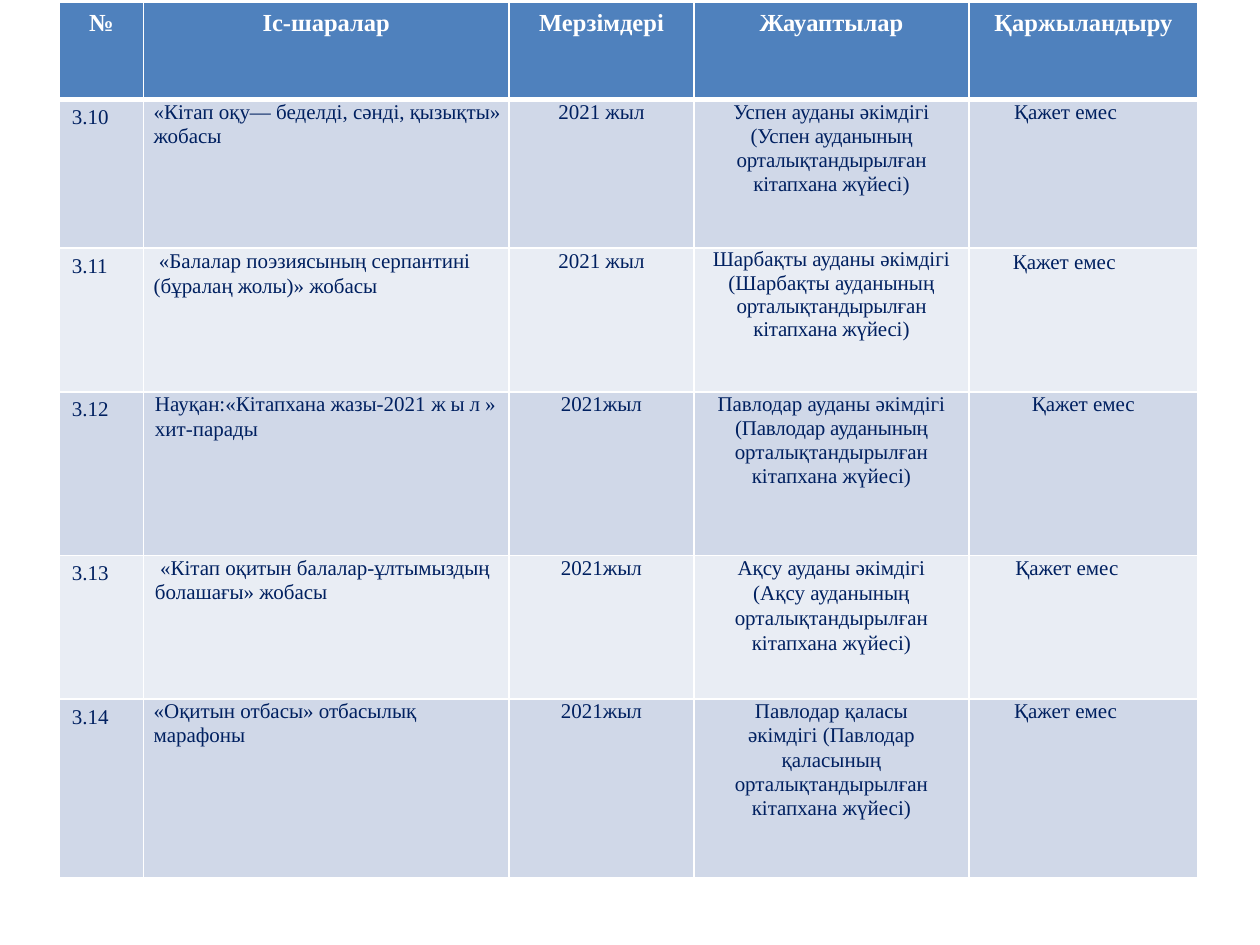
from dataclasses import dataclass

from lxml import etree
from pptx import Presentation
from pptx.dml.color import RGBColor
from pptx.enum.text import PP_ALIGN
from pptx.oxml.ns import qn
from pptx.util import Inches, Pt

LEFT, CENTER = PP_ALIGN.LEFT, PP_ALIGN.CENTER
WHITE = RGBColor(0xFF, 0xFF, 0xFF)
NAVY = RGBColor(0x00, 0x20, 0x60)
HEADER_BLUE = RGBColor(0x4F, 0x81, 0xBD)
BANDS = (RGBColor(0xD0, 0xD8, 0xE8), RGBColor(0xE9, 0xED, 0xF4))
FONT = "Times New Roman"

TABLE_BOX = (0.47, 0.02, 9.04, 6.95)
COLUMN_WIDTHS = (0.67, 2.9, 1.47, 2.18, 1.82)
ROW_HEIGHTS = (0.77, 1.18, 1.14, 1.3, 1.14, 1.42)
NUMBER_MARGINS = (0.1, 0.05)
FLUSH_MARGINS = (0, 0)


@dataclass
class Entry:
    """Cell text: runs are (text, letter spacing in points) pairs."""
    runs: tuple
    indent: float = 0
    leading: float = None
    align: PP_ALIGN = LEFT


def plain(text, indent=0, leading=None, align=LEFT):
    return Entry(((text, 0),), indent, leading, align)


HEADINGS = ("№", "Іс-шаралар", "Мерзімдері", "Жауаптылар", "Қаржыландыру")
FUNDING = "Қажет емес"
EVENTS = (
    (plain("3.10"),
     plain("«Кітап оқу— беделді, сәнді, қызықты» жобасы", 0.08, 13.8),
     plain("2021 жыл", 0.33, 13.8, CENTER),
     Entry((("Успен ауданы әкімдігі ", 0),
            ("(Успен ауданының орталықтандырылған кітапхана жүйесі", -0.1),
            (")", 0)), 0.27, 13.8, CENTER),
     plain(FUNDING, 0.36, 13.8)),
    (plain("3.11"),
     plain(" «Балалар поэзиясының серпантині (бұралаң жолы)» жобасы", 0.08, 14.4),
     plain("2021 жыл", 0.09, 14.1, CENTER),
     Entry((("Шарбақты ауданы әкімдігі (Шарбақты ауданының ", 0),
            ("орталықтандырылған кітапхана жүйесі", -0.1),
            (")", 0)), align=CENTER),
     plain(FUNDING, 0.35, 14.6)),
    (plain("3.12"),
     Entry((("Науқан:«Кітапхана жазы-2021 ", 0), ("жыл", 2.8),
            ("» хит-парады", 0)), 0.09, 14.1),
     plain("2021жыл", 0, 13.7, CENTER),
     Entry((("Павлодар ауданы әкімдігі ", 0), ("(Павлодар ауданының ", -0.1),
            ("орталықтандырылған кітапхана жүйесі)", 0)), 0.12, 13.7, CENTER),
     plain(FUNDING, 0.12, 13.7, CENTER)),
    (plain("3.13"),
     plain(" «Кітап оқитын балалар-ұлтымыздың болашағы» жобасы", 0.09, 13.9),
     plain("2021жыл", 0, 13.9, CENTER),
     plain("Ақсу ауданы әкімдігі (Ақсу ауданының орталықтандырылған "
           "кітапхана жүйесі)", 0.27, 14.2, CENTER),
     plain(FUNDING, 0.37, 14.2)),
    (plain("3.14"),
     plain("«Оқитын отбасы» отбасылық марафоны", 0.08, 13.8),
     plain("2021жыл", 0, 13.8, CENTER),
     plain("Павлодар қаласы әкімдігі (Павлодар қаласының "
           "орталықтандырылған кітапхана жүйесі)", 0.27, 13.8, CENTER),
     plain(FUNDING, 0.36, 13.8)),
)


def style_cell(cell, fill, margins, top=1, bottom=1):
    """Set margins, white borders (widths in points) and fill."""
    cell.margin_left = cell.margin_right = Inches(margins[0])
    cell.margin_top = cell.margin_bottom = Inches(margins[1])
    properties = cell._tc.get_or_add_tcPr()
    for side, width in (("L", 1), ("R", 1), ("T", top), ("B", bottom)):
        line = etree.SubElement(properties, qn(f"a:ln{side}"), w=str(Pt(width)))
        solid = etree.SubElement(line, qn("a:solidFill"))
        etree.SubElement(solid, qn("a:srgbClr"), val=str(WHITE))
    cell.fill.solid()
    cell.fill.fore_color.rgb = fill


def write_entry(cell, entry, size, color, bold=False):
    paragraph = cell.text_frame.paragraphs[0]
    paragraph.alignment = entry.align
    if entry.leading:
        is_points = entry.leading > 5
        paragraph.line_spacing = Pt(entry.leading) if is_points else entry.leading
    properties = paragraph._p.get_or_add_pPr()
    properties.set("marL", str(Inches(entry.indent)))
    properties.set("indent", "0")
    if entry.align == CENTER:
        properties.set("marR", str(Inches(entry.indent)))
    for text, spacing in entry.runs:
        run = paragraph.add_run()
        run.text = text
        run.font.name = FONT
        run.font.size = Pt(size)
        run.font.bold = bold
        run.font.color.rgb = color
        if spacing:
            run._r.get_or_add_rPr().set("spc", str(round(spacing * 100)))


def add_event_table(slide, box):
    left, top, width, height = box
    frame = slide.shapes.add_table(
        len(ROW_HEIGHTS), len(COLUMN_WIDTHS),
        Inches(left), Inches(top), Inches(width), Inches(height))
    table = frame.table
    for column, share in zip(table.columns, COLUMN_WIDTHS):
        column.width = Inches(width * share / sum(COLUMN_WIDTHS))
    for row, share in zip(table.rows, ROW_HEIGHTS):
        row.height = Inches(height * share / sum(ROW_HEIGHTS))

    for index, heading in enumerate(HEADINGS):
        cell = table.cell(0, index)
        style_cell(cell, HEADER_BLUE, NUMBER_MARGINS, bottom=3)
        write_entry(cell, plain(heading, 0, 1.02, CENTER), 14, WHITE, bold=True)

    for row_index, event in enumerate(EVENTS):
        for index, entry in enumerate(event):
            cell = table.cell(row_index + 1, index)
            style_cell(cell, BANDS[row_index % 2],
                       FLUSH_MARGINS if index else NUMBER_MARGINS,
                       top=1 if row_index else 3)
            write_entry(cell, entry, 12, NAVY)


def main():
    presentation = Presentation()
    presentation.slide_width = Inches(10)
    presentation.slide_height = Inches(7.5)
    slide = presentation.slides.add_slide(presentation.slide_layouts[6])
    add_event_table(slide, TABLE_BOX)
    presentation.save("out.pptx")


if __name__ == "__main__":
    main()
